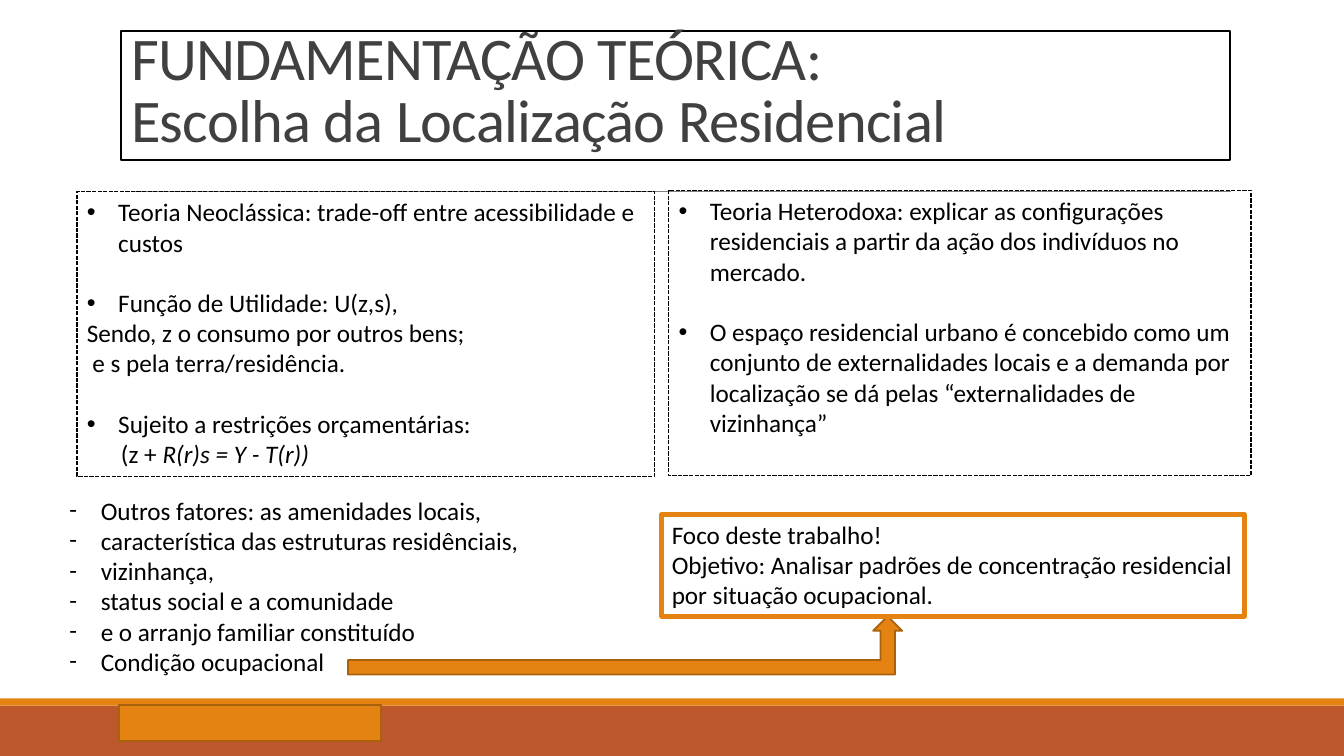
from lxml.etree import SubElement
from pptx import Presentation
from pptx.dml.color import RGBColor
from pptx.enum.dml import MSO_LINE
from pptx.enum.shapes import MSO_CONNECTOR, MSO_SHAPE
from pptx.enum.text import MSO_ANCHOR, MSO_AUTO_SIZE, PP_ALIGN
from pptx.oxml.ns import qn
from pptx.util import Cm, Pt

ORANGE, RUST, BROWN, BLACK = "E48312", "BD582C", "A9610D", "000000"
GAP = 21.6  # one text line, in points
HANGING = 0.79


def paint(shape, fill=None, line=None, width=1.25):
    """Set fill and outline; None leaves either one out."""
    shape.shadow.inherit = False
    for part, color in ((shape.fill, fill), (shape.line.fill, line)):
        if color:
            part.solid()
            part.fore_color.rgb = RGBColor.from_string(color)
        else:
            part.background()
    if line:
        shape.line.width = Pt(width)


def write(shape, lines):
    """Fill a shape with (bullet, left indent in cm, space before in pt, text, italic text)."""
    frame = shape.text_frame
    frame.word_wrap = True
    frame.vertical_anchor = MSO_ANCHOR.TOP
    for index, (bullet, indent, before, text, italic) in enumerate(lines):
        para = frame.paragraphs[0] if index == 0 else frame.add_paragraph()
        para.alignment = PP_ALIGN.LEFT
        para.space_before = Pt(before)
        para.font.name = "Calibri"
        para.font.size = Pt(18)
        para.font.color.rgb = RGBColor.from_string(BLACK)
        para.add_run().text = text
        if italic:
            span = para.add_run()
            span.text = italic
            span.font.italic = True
        properties = para._p.get_or_add_pPr()
        properties.set("marL", str(Cm(indent)))
        if bullet:
            properties.set("indent", str(-Cm(indent)))
            font = SubElement(properties, qn("a:buFont"))
            font.set("typeface", "Arial" if bullet == "•" else "Calibri")
            SubElement(properties, qn("a:buChar")).set("char", bullet)


deck = Presentation()
deck.slide_width, deck.slide_height = Cm(33.87), Cm(19.05)
page = deck.slides.add_slide(deck.slide_layouts[5])

# Footer bands, bent arrow and the rule under the title
for kind, left, top, width, height, fill, line in (
    (MSO_SHAPE.RECTANGLE, 0, 17.78, 33.87, 1.27, RUST, None),
    (MSO_SHAPE.RECTANGLE, 0, 17.6, 33.87, 0.18, ORANGE, None),
    (MSO_SHAPE.RECTANGLE, 3, 17.76, 6.6, 0.91, ORANGE, BROWN),
    (MSO_SHAPE.BENT_UP_ARROW, 8.77, 15.53, 13.97, 1.47, ORANGE, BROWN),
):
    paint(page.shapes.add_shape(kind, Cm(left), Cm(top), Cm(width), Cm(height)), fill, line)

rule = page.shapes.add_connector(MSO_CONNECTOR.STRAIGHT, Cm(3.33), Cm(4.82), Cm(31.01), Cm(4.82))
rule.line.color.rgb = RGBColor.from_string("808080")
rule.line.width = Pt(0.5)
SubElement(rule._element.spPr, qn("a:effectLst"))

# Title
title = page.shapes.title
title.left, title.top, title.width, title.height = Cm(3.05), Cm(0.78), Cm(27.94), Cm(3.25)
paint(title, line=BLACK)
title.text_frame.text = "FUNDAMENTAÇÃO TEÓRICA:\vEscolha da Localização Residencial"
title.text_frame.auto_size = MSO_AUTO_SIZE.NONE
title.text_frame.vertical_anchor = MSO_ANCHOR.BOTTOM
heading = title.text_frame.paragraphs[0]
heading.alignment = PP_ALIGN.LEFT
heading.line_spacing = 0.85
heading.font.name = "Calibri"
heading.font.size = Pt(43.2)
heading.font.color.rgb = RGBColor.from_string("404040")
for span in heading.runs:
    span.font._element.set("spc", "-50")

# The two theories
neoclassical = [
    ("•", HANGING, 0, "Teoria Neoclássica: trade-off entre acessibilidade e custos", ""),
    ("•", HANGING, GAP, "Função de Utilidade: U(z,s),", ""),
    ("", 0, 0, "Sendo, z o consumo por outros bens;", ""),
    ("", 0.14, 0, "e s pela terra/residência.", ""),
    ("•", HANGING, GAP, "Sujeito a restrições orçamentárias:", ""),
    ("", 0.86, 0, "(z + ", "R(r)s = Y - T(r))"),
]
heterodox = [
    ("•", HANGING, 0, "Teoria Heterodoxa: explicar as configurações residenciais a partir "
     "da ação dos indivíduos no mercado.", ""),
    ("•", HANGING, GAP, "O espaço residencial urbano é concebido como um conjunto de "
     "externalidades locais e a demanda por localização se dá pelas "
     "“externalidades de vizinhança”", ""),
]
for left, top, width, lines in ((1.94, 4.83, 14.56, neoclassical), (16.85, 4.8, 14.68, heterodox)):
    theory = page.shapes.add_shape(MSO_SHAPE.RECTANGLE, Cm(left), Cm(top), Cm(width), Cm(7.18))
    paint(theory, line=BLACK, width=1)
    theory.line.dash_style = MSO_LINE.SQUARE_DOT
    write(theory, lines)

# Other factors and the focus of the work
factors = page.shapes.add_textbox(Cm(1.5), Cm(12.35), Cm(22.53), Cm(6.4))
write(factors, [("-", HANGING, 0, text, "") for text in (
    "Outros fatores: as amenidades locais,",
    "característica das estruturas residênciais,",
    "vizinhança,",
    "status social e a comunidade",
    "e o arranjo familiar constituído",
    "Condição ocupacional",
)])

focus = page.shapes.add_shape(MSO_SHAPE.RECTANGLE, Cm(16.68), Cm(12.96), Cm(14.68), Cm(2.57))
paint(focus, line=ORANGE, width=3.5)
write(focus, [("", 0, 0, text, "") for text in (
    "Foco deste trabalho!",
    "Objetivo: Analisar padrões de concentração residencial por situação ocupacional.",
)])

deck.save("out.pptx")
